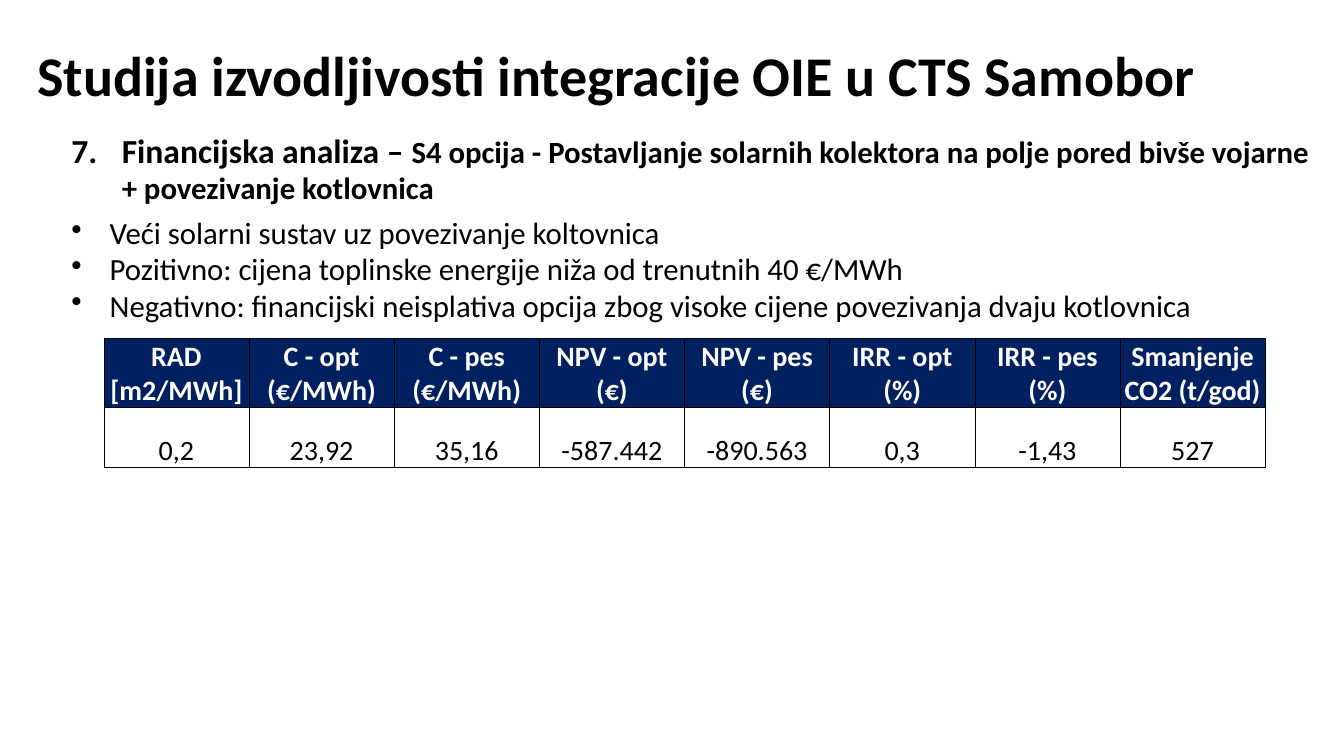
from dataclasses import dataclass

from lxml.etree import SubElement
from pptx import Presentation
from pptx.dml.color import RGBColor
from pptx.enum.text import MSO_ANCHOR, PP_ALIGN
from pptx.oxml.ns import qn
from pptx.slide import Slide
from pptx.table import _Cell
from pptx.text.text import _Paragraph
from pptx.util import Inches, Pt


@dataclass(frozen=True)
class Theme:
    face: str = "Calibri"
    ink: RGBColor = RGBColor(0, 0, 0)
    pale: RGBColor = RGBColor(255, 255, 255)
    navy: RGBColor = RGBColor(0, 0x20, 0x60)
    title: int = 40
    lead: int = 24
    body: int = 22
    cell: int = 20
    rule: float = 0.5


@dataclass(frozen=True)
class Run:
    text: str
    size: int
    bold: bool = False


@dataclass(frozen=True)
class Item:
    runs: tuple[Run, ...]
    mark: str
    attrs: dict[str, str]
    left: float = 0.39
    hang: float = 0.38
    before: int = 1
    after: int = 0


@dataclass(frozen=True)
class Column:
    head: str
    value: str


THEME = Theme()
TITLE = Run("Studija izvodljivosti integracije OIE u CTS Samobor", THEME.title, True)
POINTS = (
    "Veći solarni sustav uz povezivanje koltovnica",
    "Pozitivno: cijena toplinske energije niža od trenutnih 40 €/MWh",
    "Negativno: financijski neisplativa opcija zbog visoke cijene povezivanja dvaju kotlovnica",
)
LEAD = Item(
    (
        Run("Financijska analiza – ", THEME.lead, True),
        Run(
            "S4 opcija - Postavljanje solarnih kolektora na polje pored bivše vojarne "
            "+ povezivanje kotlovnica",
            THEME.body,
            True,
        ),
    ),
    "a:buAutoNum",
    {"type": "arabicPeriod", "startAt": "7"},
    left=0.51,
    hang=0.5,
    before=0,
    after=6,
)
ITEMS = (LEAD,) + tuple(
    Item((Run(point, THEME.body),), "a:buChar", {"char": "•"}) for point in POINTS
)
COLUMNS = (
    Column("RAD [m2/MWh]", "0,2"),
    Column("C - opt (€/MWh)", "23,92"),
    Column("C - pes (€/MWh)", "35,16"),
    Column("NPV - opt (€)", "-587.442"),
    Column("NPV - pes (€)", "-890.563"),
    Column("IRR - opt (%)", "0,3"),
    Column("IRR - pes (%)", "-1,43"),
    Column("Smanjenje CO2 (t/god)", "527"),
)


def put(target: object, values: dict[str, object]) -> None:
    for name, value in values.items():
        setattr(target, name, value)


def write(para: _Paragraph, run: Run, ink: RGBColor = THEME.ink) -> None:
    part = para.add_run()
    part.text = run.text
    put(part.font, {"name": THEME.face, "size": Pt(run.size), "bold": run.bold})
    part.font.color.rgb = ink


def head(slide: Slide) -> None:
    title = slide.shapes.title
    put(title, {"left": Inches(0.27), "top": Inches(0.05),
                "width": Inches(12.87), "height": Inches(1.45)})
    put(title.text_frame, {"word_wrap": True, "vertical_anchor": MSO_ANCHOR.MIDDLE})
    para = title.text_frame.paragraphs[0]
    put(para, {"alignment": PP_ALIGN.LEFT, "line_spacing": 0.9})
    write(para, TITLE)


def bullet(para: _Paragraph, item: Item) -> None:
    put(para, {"line_spacing": 0.95, "space_before": Pt(item.before),
               "space_after": Pt(item.after)})
    props = para._p.get_or_add_pPr()
    props.set("marL", str(Inches(item.left)))
    props.set("indent", str(-Inches(item.hang)))
    SubElement(props, qn(item.mark), item.attrs)
    for run in item.runs:
        write(para, run)


def listing(slide: Slide) -> None:
    box = slide.shapes.add_textbox(Inches(0.6), Inches(1.27), Inches(12.64), Inches(5.14))
    frame = box.text_frame
    frame.word_wrap = True
    for index, item in enumerate(ITEMS):
        bullet(frame.add_paragraph() if index else frame.paragraphs[0], item)


def border(cell: _Cell) -> None:
    props = cell._tc.get_or_add_tcPr()
    for index, side in enumerate(("a:lnL", "a:lnR", "a:lnT", "a:lnB")):
        line = props.makeelement(qn(side), {"w": str(Pt(THEME.rule))})
        fill = SubElement(line, qn("a:solidFill"))
        SubElement(fill, qn("a:srgbClr"), {"val": str(THEME.ink)})
        props.insert(index, line)


def fill(cell: _Cell, text: str, top: bool) -> None:
    edge = Inches(0.01)
    put(cell, {"margin_left": edge, "margin_right": edge, "margin_top": edge,
               "margin_bottom": 0, "vertical_anchor": MSO_ANCHOR.BOTTOM})
    if top:
        cell.fill.solid()
        cell.fill.fore_color.rgb = THEME.navy
    else:
        cell.fill.background()
    border(cell)
    para = cell.text_frame.paragraphs[0]
    para.alignment = PP_ALIGN.CENTER
    write(para, Run(text, THEME.cell, top), THEME.pale if top else THEME.ink)


def grid(slide: Slide) -> None:
    wide = Inches(1.44)
    count = len(COLUMNS)
    table = slide.shapes.add_table(
        2, count, Inches(1.03), Inches(3.36), wide * count, Inches(1.28)
    ).table
    for row, high in zip(table.rows, (0.68, 0.6)):
        row.height = Inches(high)
    for index, column in enumerate(COLUMNS):
        table.columns[index].width = wide
        fill(table.cell(0, index), column.head, True)
        fill(table.cell(1, index), column.value, False)


def main() -> None:
    deck = Presentation()
    put(deck, {"slide_width": Inches(13.33), "slide_height": Inches(7.5)})
    slide = deck.slides.add_slide(deck.slide_layouts[5])
    head(slide)
    listing(slide)
    grid(slide)
    deck.save("out.pptx")


if __name__ == "__main__":
    main()
